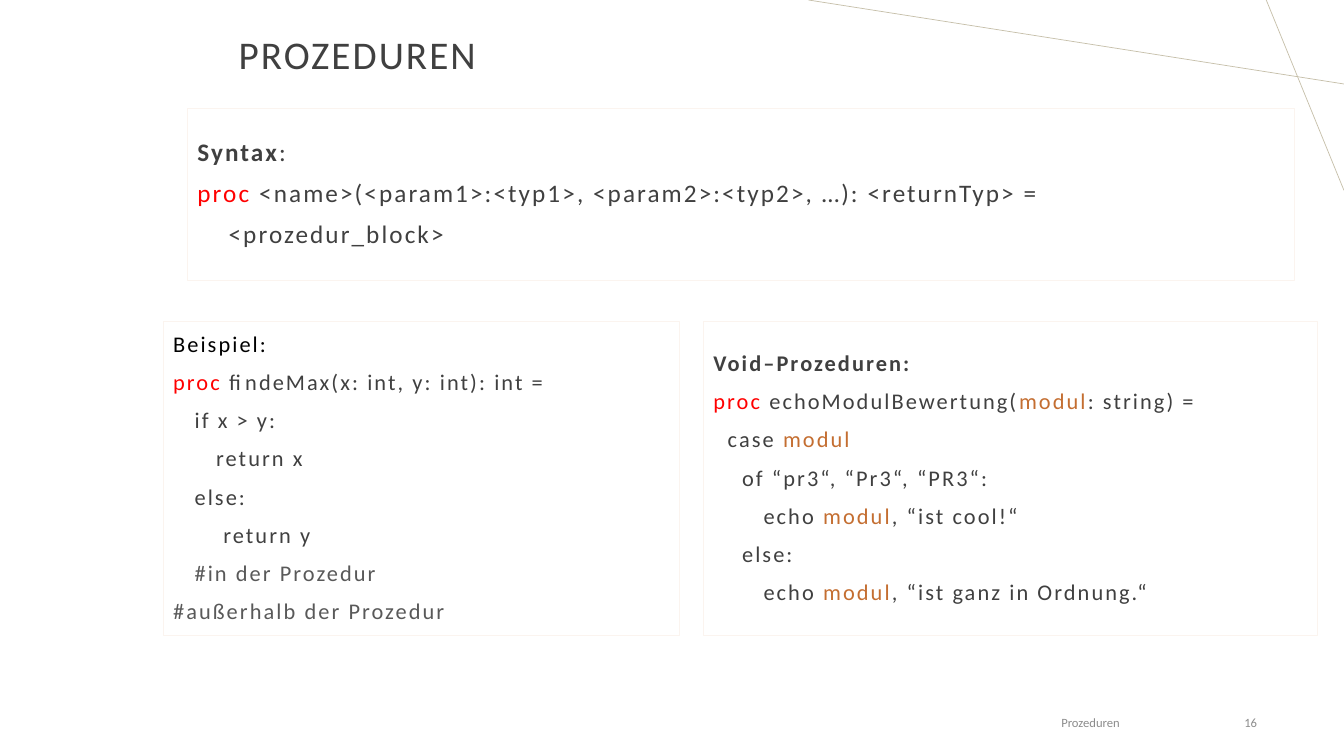
import pptx
import pptx.util
import pptx.dml.color
import pptx.enum.shapes
import pptx.enum.text
import pptx.oxml

Pt = pptx.util.Pt
RGBColor = pptx.dml.color.RGBColor
ALIGN = pptx.enum.text.PP_ALIGN

BLACK = RGBColor(0x00, 0x00, 0x00)
DARK = RGBColor(0x40, 0x40, 0x40)
COMMENT = RGBColor(0x59, 0x59, 0x59)
FOOTER = RGBColor(0x8C, 0x8C, 0x8C)
KEYWORD = RGBColor(0xFF, 0x00, 0x00)
ARGUMENT = RGBColor(0xC4, 0x6E, 0x31)
FRAME = RGBColor(0xFB, 0xF4, 0xEF)
RAY = RGBColor(0xC6, 0xBF, 0xA9)

deck = pptx.Presentation()
deck.slide_width, deck.slide_height = Pt(960), Pt(540)
slide = deck.slides.add_slide(deck.slide_layouts[6])


def add_line(frame, first, runs, size, tracking=0, indent=0, **layout):
    line = frame.paragraphs[0] if first else frame.add_paragraph()
    for name, value in layout.items():
        setattr(line, name, value)
    if indent:
        properties = line._p.get_or_add_pPr()
        properties.set("marL", str(Pt(indent)))
        properties.set("indent", "0")
    for text, color, bold in runs:
        run = line.add_run()
        run.text = text
        run.font.color.rgb = color
        for name, value in {"name": "Calibri", "size": Pt(size), "bold": bold}.items():
            setattr(run.font, name, value)
        if tracking:
            run._r.get_or_add_rPr().set("spc", str(int(tracking * 100)))


def prepare(frame):
    for name, value in {
        "word_wrap": True,
        "vertical_anchor": pptx.enum.text.MSO_ANCHOR.MIDDLE,
    }.items():
        setattr(frame, name, value)
    return frame


for ends in [(960, 60, 577.5, 0), (904.5, 0, 960, 136)]:
    ray = slide.shapes.add_connector(
        pptx.enum.shapes.MSO_CONNECTOR.STRAIGHT, *map(Pt, ends))
    ray.line.color.rgb = RAY
    ray.line.width = Pt(0.5)
    ray._element.spPr.append(pptx.oxml.parse_xml(
        '<a:effectLst xmlns:a="http://schemas.openxmlformats.org/drawingml/2006/main"/>'))

labels = [
    ("PROZEDUREN", (-76.3, -11.5, 663, 104.4), 28, DARK, 1.5, ALIGN.CENTER, 0.9),
    ("Prozeduren", (617, 501.8, 324, 28.8), 9, FOOTER, 0, ALIGN.CENTER, 1.0),
    ("16", (689, 501.8, 216, 28.8), 9, FOOTER, 0, ALIGN.RIGHT, 1.0),
]
for text, place, size, color, tracking, alignment, spacing in labels:
    label = prepare(slide.shapes.add_textbox(*map(Pt, place)).text_frame)
    add_line(label, True, [(text, color, False)], size, tracking,
             alignment=alignment, line_spacing=spacing)

proc = ("proc ", KEYWORD, False)
modul = ("modul", ARGUMENT, False)

syntax = [
    (0, [("Syntax", DARK, True), (":", DARK, False)]),
    (0, [proc, ("<name>(<param1>:<typ1>, <param2>:<typ2>, …): <returnTyp> =", DARK, False)]),
    (4, [("<prozedur_block>", DARK, False)]),
]
void_procedures = [
    (0, [("Void–Prozeduren:", DARK, True)]),
    (0, [proc, ("echoModulBewertung(", DARK, False), modul, (": string) =", DARK, False)]),
    (2, [("case ", DARK, False), modul]),
    (4, [("of “pr3“, “Pr3“, “PR3“:", DARK, False)]),
    (7, [("echo ", DARK, False), modul, (", “ist cool!“", DARK, False)]),
    (4, [("else:", DARK, False)]),
    (7, [("echo ", DARK, False), modul, (", “ist ganz in Ordnung.“", DARK, False)]),
]
example = [
    (0, [("Beispiel:", BLACK, False)]),
    (0, [proc, ("findeMax(x: int, y: int): int =", DARK, False)]),
    (3, [("if x > y:", DARK, False)]),
    (6, [("return x", DARK, False)]),
    (3, [("else:", DARK, False)]),
    (7, [("return y", DARK, False)]),
    (3, [("#in der Prozedur", COMMENT, False)]),
    (0, [("#außerhalb der Prozedur", COMMENT, False)]),
]
panels = [
    (syntax, (133.9, 77.8, 790.5, 122.4), 18),
    (void_procedures, (502.5, 229.7, 438.5, 224.6), 16),
    (example, (116.6, 229.7, 368.6, 224.6), 16),
]
for code, place, size in panels:
    panel = slide.shapes.add_shape(
        pptx.enum.shapes.MSO_SHAPE.RECTANGLE, *map(Pt, place))
    panel.shadow.inherit = False
    panel.fill.background()
    panel.line.color.rgb = FRAME
    panel.line.width = Pt(0.75)
    frame = prepare(panel.text_frame)
    column = 0.226 * size + 1.5
    for row, (depth, runs) in enumerate(code):
        add_line(frame, row == 0, runs, size, 1.5, round(depth * column, 1),
                 alignment=ALIGN.LEFT, line_spacing=0.9, space_before=Pt(10))

deck.save("out.pptx")
